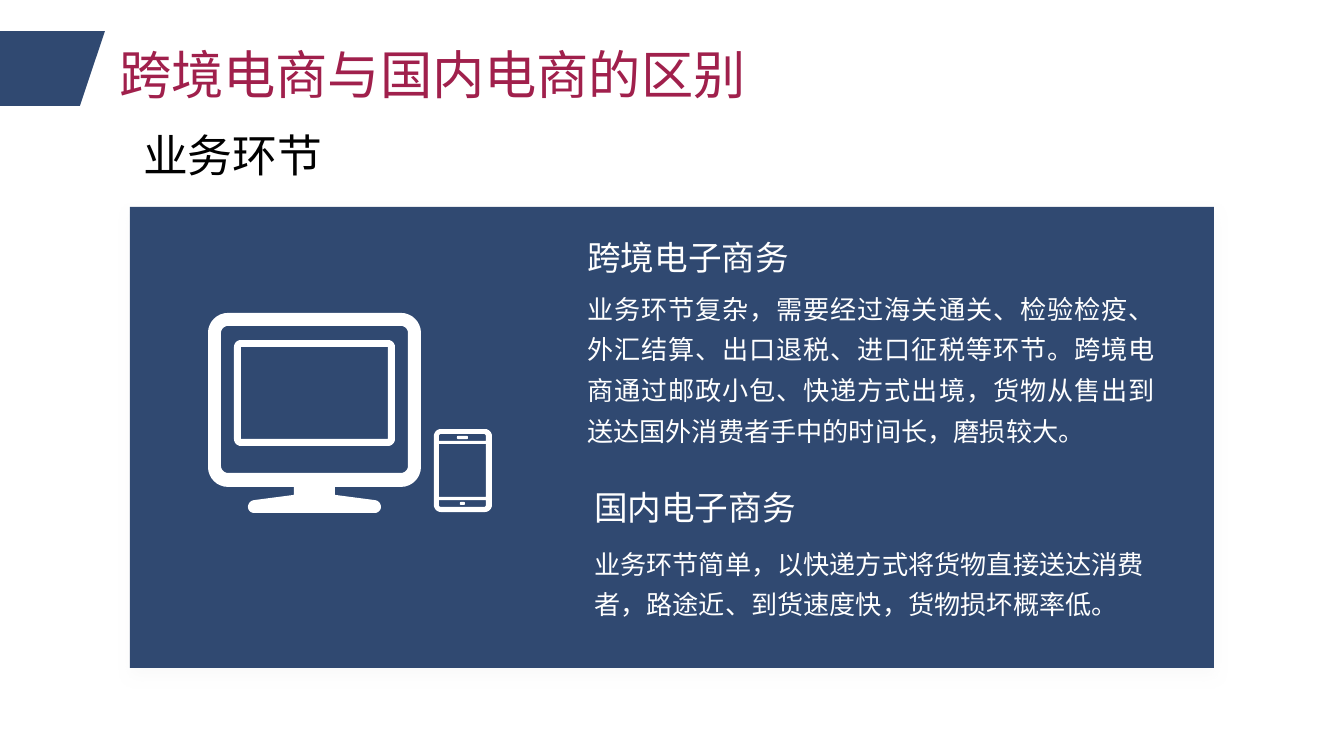
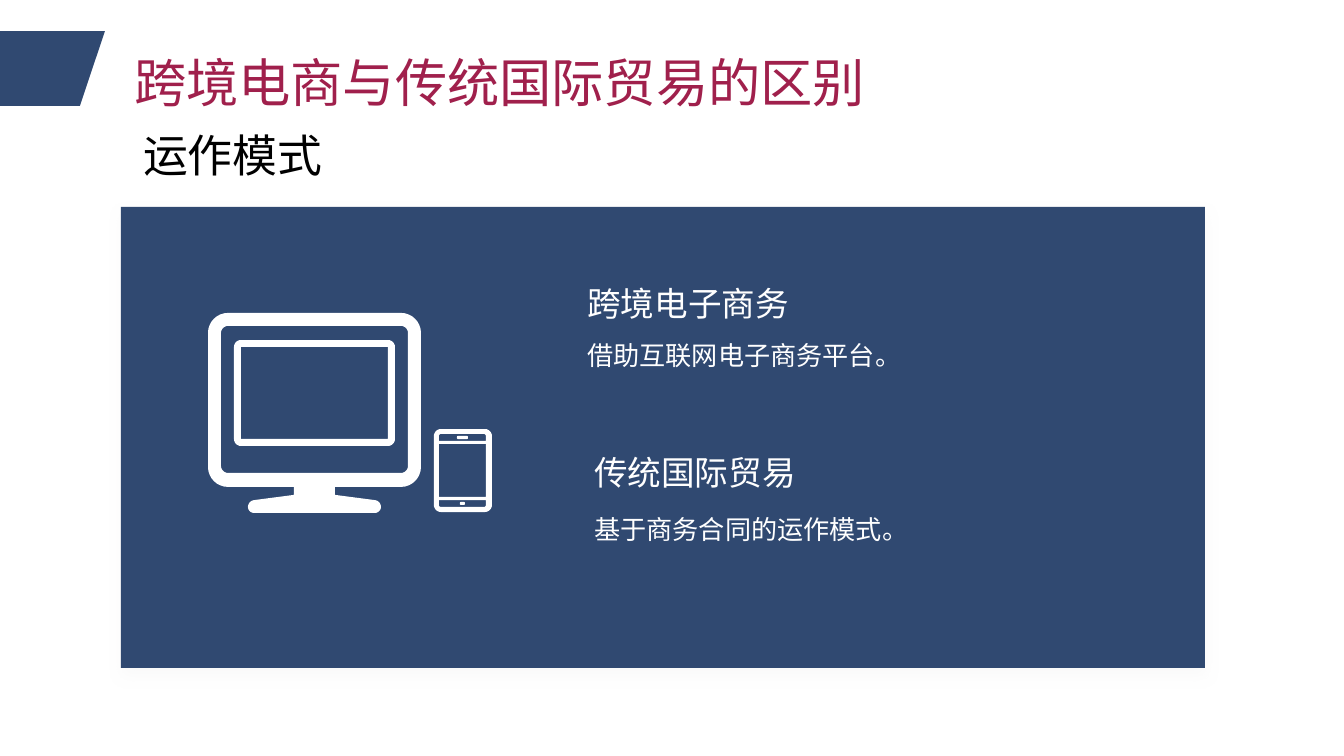
from lxml.etree import SubElement
from pptx import Presentation
from pptx.dml.color import RGBColor
from pptx.enum.shapes import MSO_SHAPE
from pptx.enum.text import MSO_AUTO_SIZE, PP_ALIGN
from pptx.oxml.ns import qn
from pptx.util import Emu, Pt

SCALE = 914400 / 134.4  # EMU per px
FONT = "Noto Sans CJK SC"
NAVY, CRIMSON, WHITE, BLACK, SHADOW = "304971", "A0204C", "FFFFFF", "000000", "E7E6E6"
LEFT, JUSTIFY = PP_ALIGN.LEFT, PP_ALIGN.JUSTIFY

# Each section: heading top, heading, body, body height, body alignment
SLIDES = [
    dict(title="跨境电商与国内电商的区别", title_box=(106, 36, 753, 77),
         topic="业务环节", panel_left=130,
         sections=[
             (230, "跨境电子商务",
              "业务环节复杂，需要经过海关通关、检验检疫、外汇结算、出口退税、进口征税等环节。"
              "跨境电商通过邮政小包、快递方式出境，货物从售出到送达国外消费者手中的时间长，磨损较大。",
              178, JUSTIFY),
             (480, "国内电子商务",
              "业务环节简单，以快递方式将货物直接送达消费者，路途近、到货速度快，货物损坏概率低。",
              95, LEFT)]),
    dict(title="跨境电商与传统国际贸易的区别", title_box=(121, 44, 990, 77),
         topic="运作模式", panel_left=121,
         sections=[
             (276, "跨境电子商务", "借助互联网电子商务平台。", 55, JUSTIFY),
             (445, "传统国际贸易", "基于商务合同的运作模式。", 55, JUSTIFY)]),
]

# Left, heading width, body width, body offset below the heading top
SECTION_LAYOUT = [(574, 297, 594, 47), (581, 236, 587, 52)]


def box(left, top, right, bottom, top_r=0, bottom_r=0):
    """Clockwise corners as (x, y, corner radius)."""
    return [(left, top, top_r), (right, top, top_r),
            (right, bottom, bottom_r), (left, bottom, bottom_r)]


STAND = [(335, 487, 0), (335, 495, 0), (381, 501, 6), (381, 513, 6),
         (248, 513, 6), (248, 501, 6), (294, 495, 0), (294, 487, 0)]
CASE = box(208, 313, 421, 487, 20, 20)
MONITOR = [CASE[:3] + STAND + CASE[3:], box(221, 326, 408, 473, 7, 7)]
SCREEN = [box(234, 340, 395, 446, 7, 7), box(241, 347, 388, 439)]
PHONE = [box(434, 429, 492, 512, 7, 7), box(439, 434, 486, 441, 2, 0),
         box(439, 444, 486, 497), box(439, 500, 486, 507, 0, 2)]
SPEAKER = [box(457, 436, 468, 439, 1, 1)]
BUTTON = [box(460, 502, 465, 505, 1, 1)]
ICONS = [PHONE, SPEAKER, BUTTON, SCREEN, MONITOR]
CORNER_BAND = [[(0, 31, 0), (105, 31, 0), (80, 106, 0), (0, 106, 0)]]


def px(n):
    return Emu(round(n * SCALE))


def rgb(code):
    return RGBColor.from_string(code)


def paint(sp, color):
    sp.shadow.inherit = False
    sp.fill.solid()
    sp.fill.fore_color.rgb = rgb(color)
    sp.line.fill.background()


def toward(start, end, length):
    dx, dy = end[0] - start[0], end[1] - start[1]
    f = length / (dx * dx + dy * dy) ** 0.5
    return start[0] + dx * f, start[1] + dy * f


def outline(corners, steps=8):
    """Points of a polygon whose corners are replaced by arcs."""
    points = []
    for i, c in enumerate(corners):
        x, y, radius = c
        if not radius:
            points.append((x, y))
            continue
        before, after = corners[i - 1], corners[(i + 1) % len(corners)]
        curve = [toward(c, before, radius), toward(c, before, radius * 0.45),
                 toward(c, after, radius * 0.45), toward(c, after, radius)]
        for k in range(steps + 1):
            t = k / steps
            weights = ((1 - t) ** 3, 3 * t * (1 - t) ** 2, 3 * t * t * (1 - t), t ** 3)
            points.append(tuple(sum(w * q[axis] for w, q in zip(weights, curve))
                                for axis in (0, 1)))
    return points


def add_freeform(s, contours, color):
    """Draw contours in tenths of a px, so that arcs stay smooth."""
    builder = None
    for corners in contours:
        start, *rest = [(x * 10, y * 10) for x, y in outline(corners)]
        if builder is None:
            builder = s.shapes.build_freeform(*start, scale=SCALE / 10)
        else:
            builder.move_to(*start)
        builder.add_line_segments(rest, close=True)
    paint(builder.convert_to_shape(), color)


def add_panel(s, left):
    sp = s.shapes.add_shape(MSO_SHAPE.RECTANGLE, px(left), px(207), px(1084), px(461))
    paint(sp, NAVY)
    effects = sp._element.spPr.find(qn("a:effectLst"))
    shadow = SubElement(effects, qn("a:outerShdw"), blurRad=str(Pt(7)), dist=str(Pt(4)),
                        dir="4560000", algn="t", rotWithShape="0")
    color = SubElement(shadow, qn("a:srgbClr"), val=SHADOW)
    SubElement(color, qn("a:alpha"), val="20000")


def add_text(s, text, place, size, color, align=LEFT, spacing=None):
    tf = s.shapes.add_textbox(*map(px, place)).text_frame
    tf.word_wrap = True
    tf.auto_size = MSO_AUTO_SIZE.SHAPE_TO_FIT_TEXT
    p = tf.paragraphs[0]
    p.text = text
    p.alignment = align
    p.line_spacing = spacing
    p.font.size = Pt(size)
    p.font.color.rgb = rgb(color)
    p.font.name = FONT
    SubElement(p._p.pPr.find(qn("a:defRPr")), qn("a:ea"), typeface=FONT)


def add_section(s, section, layout):
    top, heading, body, height, align = section
    left, heading_width, body_width, offset = layout
    add_text(s, body, (left, top + offset, body_width, height), 14, WHITE, align, 1.3)
    add_text(s, heading, (left, top, heading_width, 54), 18, WHITE)


def main():
    prs = Presentation()
    prs.slide_width, prs.slide_height = px(1344), px(756)
    for content in SLIDES:
        s = prs.slides.add_slide(prs.slide_layouts[6])
        add_freeform(s, CORNER_BAND, NAVY)
        add_text(s, content["title"], content["title_box"], 28, CRIMSON)
        add_panel(s, content["panel_left"])
        for icon in ICONS:
            add_freeform(s, icon, WHITE)
        for section, layout in zip(content["sections"], SECTION_LAYOUT):
            add_section(s, section, layout)
        add_text(s, content["topic"], (130, 121, 358, 67), 24, BLACK)
    prs.save("out.pptx")


if __name__ == "__main__":
    main()
